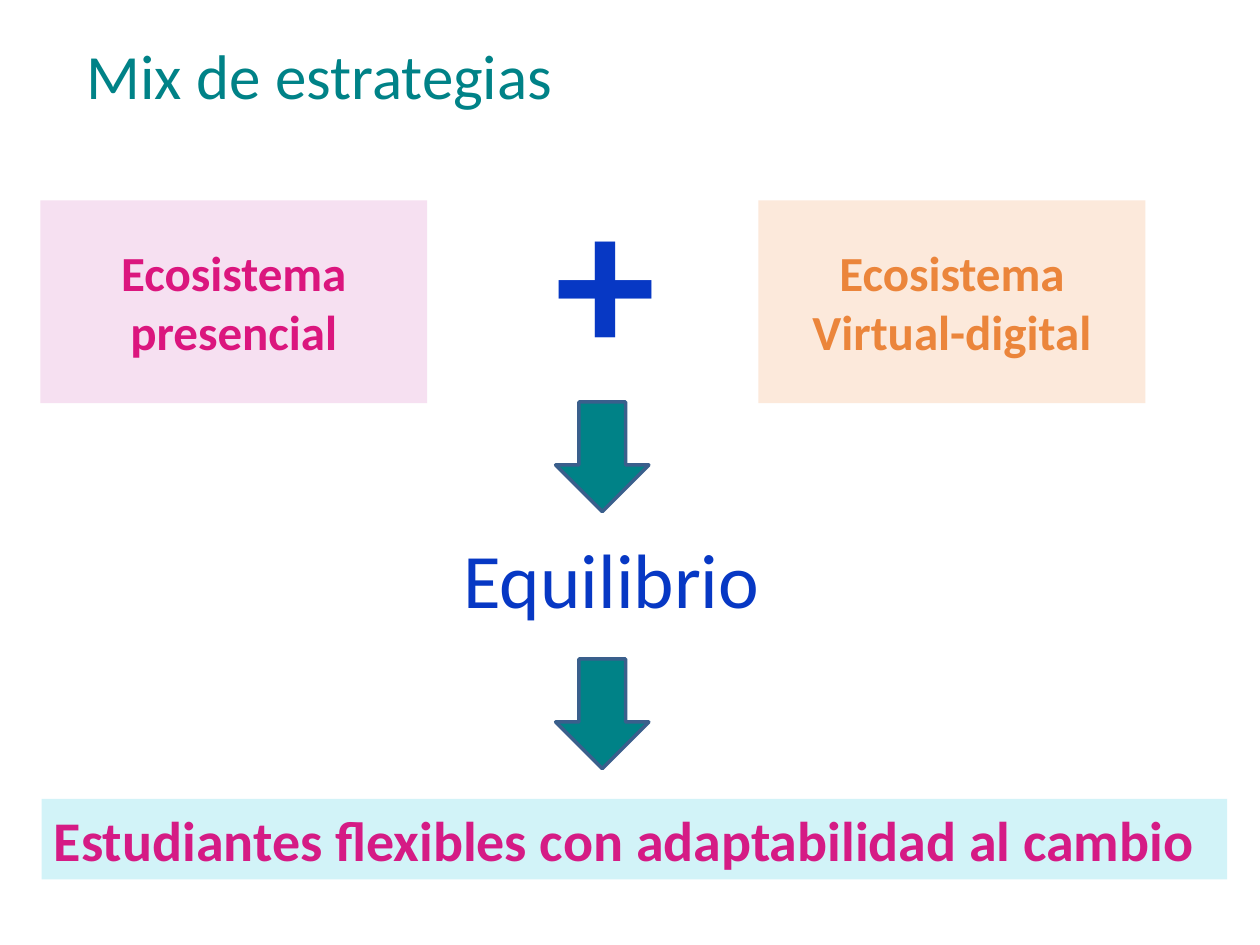
from dataclasses import dataclass

from pptx import Presentation
from pptx.dml.color import RGBColor
from pptx.enum.shapes import MSO_SHAPE
from pptx.enum.text import MSO_ANCHOR, MSO_AUTO_SIZE, PP_ALIGN
from pptx.util import Inches, Pt

RECTANGLE = MSO_SHAPE.RECTANGLE
DOWN_ARROW = MSO_SHAPE.DOWN_ARROW
TOP, MIDDLE = MSO_ANCHOR.TOP, MSO_ANCHOR.MIDDLE
LEFT, CENTER = PP_ALIGN.LEFT, PP_ALIGN.CENTER
NO_AUTOFIT = MSO_AUTO_SIZE.NONE
TITLE_ONLY = 5


@dataclass(frozen=True)
class Theme:
    """Colours, font and type sizes of the slide."""
    font: str = "Calibri"
    teal: str = "008287"
    blue: str = "0738C4"
    pink: str = "DB167E"
    magenta: str = "D51B85"
    orange: str = "EB853B"
    pale_pink: str = "F6E0F1"
    pale_orange: str = "FCE9DB"
    pale_cyan: str = "D2F3F8"
    arrow_line: str = "3A5F8C"
    heading_size: int = 36
    ecosystem_size: int = 28
    plus_size: int = 115
    balance_size: int = 44
    result_size: int = 32


THEME = Theme()


def place(shape, box):
    """Move a shape to a box of left, top, width and height in inches."""
    shape.left, shape.top, shape.width, shape.height = map(Inches, box)


def fill_shape(shape, color):
    """Give a shape a solid fill."""
    shape.fill.solid()
    shape.fill.fore_color.rgb = RGBColor.from_string(color)


def write(shape, text, size, color, bold=False, align=LEFT, anchor=TOP):
    """Set and format the single paragraph of a shape."""
    frame = shape.text_frame
    frame.text = text
    frame.word_wrap = True
    frame.auto_size = NO_AUTOFIT
    frame.vertical_anchor = anchor
    paragraph = frame.paragraphs[0]
    paragraph.alignment = align
    font = paragraph.runs[0].font
    font.name, font.size, font.bold = THEME.font, Pt(size), bold
    font.color.rgb = RGBColor.from_string(color)


def add_panel(slide, box, fill):
    """Add a filled rectangle without outline."""
    panel = slide.shapes.add_shape(RECTANGLE, *map(Inches, box))
    panel.shadow.inherit = False
    panel.line.fill.background()
    fill_shape(panel, fill)
    return panel


def add_label(slide, box, text, size, color, bold=False):
    """Add a plain text label."""
    label = slide.shapes.add_textbox(*map(Inches, box))
    write(label, text, size, color, bold)


def add_arrow(slide, box):
    """Add an outlined arrow pointing down."""
    arrow = slide.shapes.add_shape(DOWN_ARROW, *map(Inches, box))
    arrow.shadow.inherit = False
    fill_shape(arrow, THEME.teal)
    arrow.line.color.rgb = RGBColor.from_string(THEME.arrow_line)
    arrow.line.width = Pt(2)


def add_ecosystems(slide, box):
    """Place the two ecosystem panels at the ends of a box, joined by a plus."""
    left, top, width, height = box
    panel_width = 3.07
    face_to_face = slide.shapes.title
    place(face_to_face, (left, top, panel_width, height))
    fill_shape(face_to_face, THEME.pale_pink)
    digital_box = (left + width - panel_width, top, panel_width, height)
    digital = add_panel(slide, digital_box, THEME.pale_orange)
    for panel, text, color in (
        (face_to_face, "Ecosistema presencial", THEME.pink),
        (digital, "Ecosistema Virtual-digital", THEME.orange),
    ):
        write(panel, text, THEME.ecosystem_size, color, True, CENTER, MIDDLE)
    plus_box = (left + 3.99, top - 0.43, 0.94, height + 0.43)
    add_label(slide, plus_box, "+", THEME.plus_size, THEME.blue, True)


def add_balance(slide, box):
    """Place the balance label between two arrows at the ends of a box."""
    left, top, width, height = box
    arrow_width, arrow_height = 0.74, 0.87
    for arrow_top in (top, top + height - arrow_height):
        add_arrow(slide, (left + 0.83, arrow_top, arrow_width, arrow_height))
    label_box = (left, top + 0.98, width, 0.84)
    add_label(slide, label_box, "Equilibrio", THEME.balance_size, THEME.blue)


def add_result(slide, box):
    """Place the closing banner."""
    banner = add_panel(slide, box, THEME.pale_cyan)
    text = "Estudiantes flexibles con adaptabilidad al cambio"
    write(banner, text, THEME.result_size, THEME.magenta, True)


def main():
    """Build and save the slide."""
    presentation = Presentation()
    presentation.slide_width = Inches(10)
    presentation.slide_height = Inches(7.5)
    slide = presentation.slides.add_slide(presentation.slide_layouts[TITLE_ONLY])
    add_ecosystems(slide, (0.32, 1.59, 8.77, 1.61))
    add_label(slide, (0.59, 0.24, 5.01, 0.71), "Mix de estrategias",
              THEME.heading_size, THEME.teal)
    add_balance(slide, (3.58, 3.19, 5.8, 2.91))
    add_result(slide, (0.33, 6.34, 9.41, 0.64))
    presentation.save("out.pptx")


if __name__ == "__main__":
    main()
